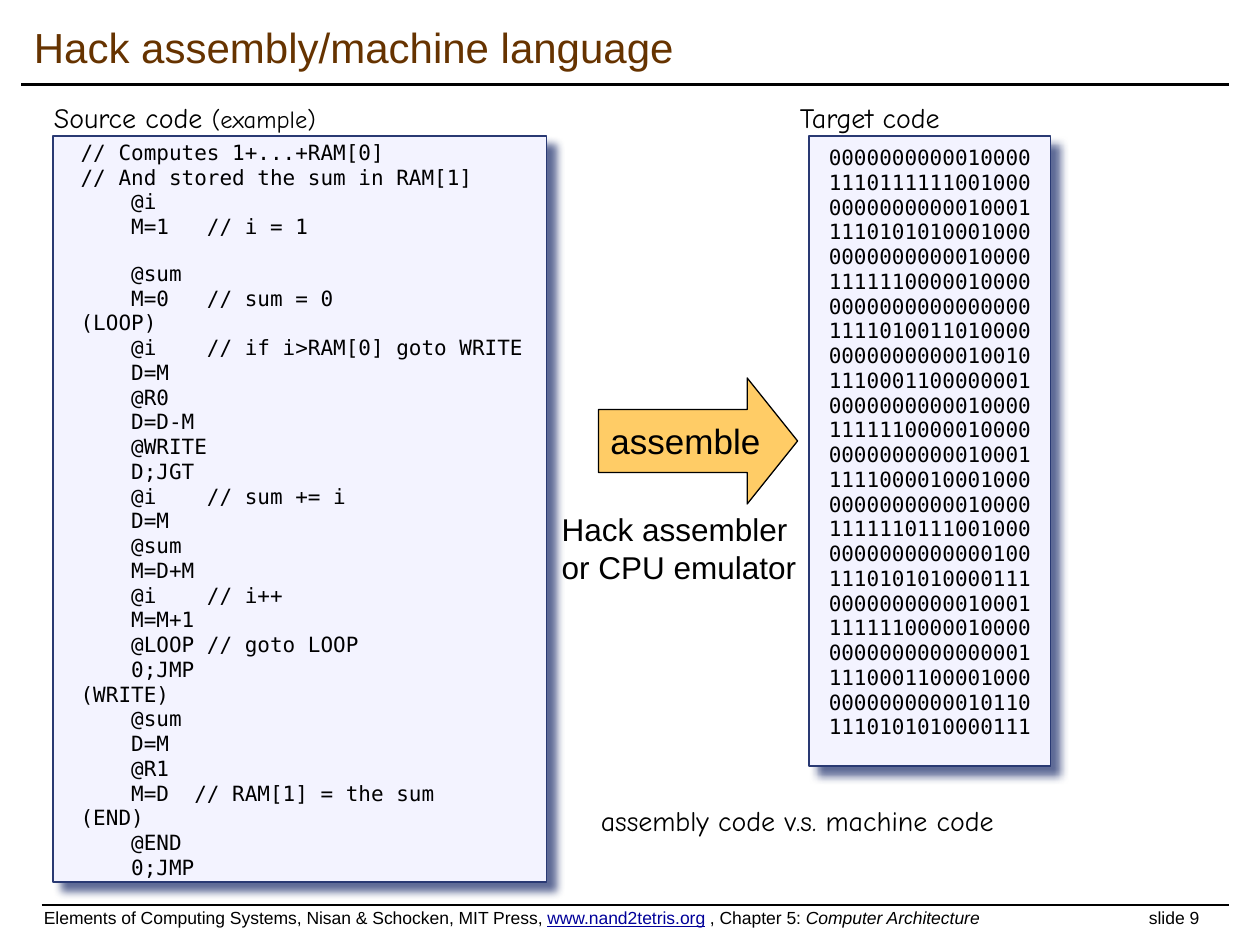
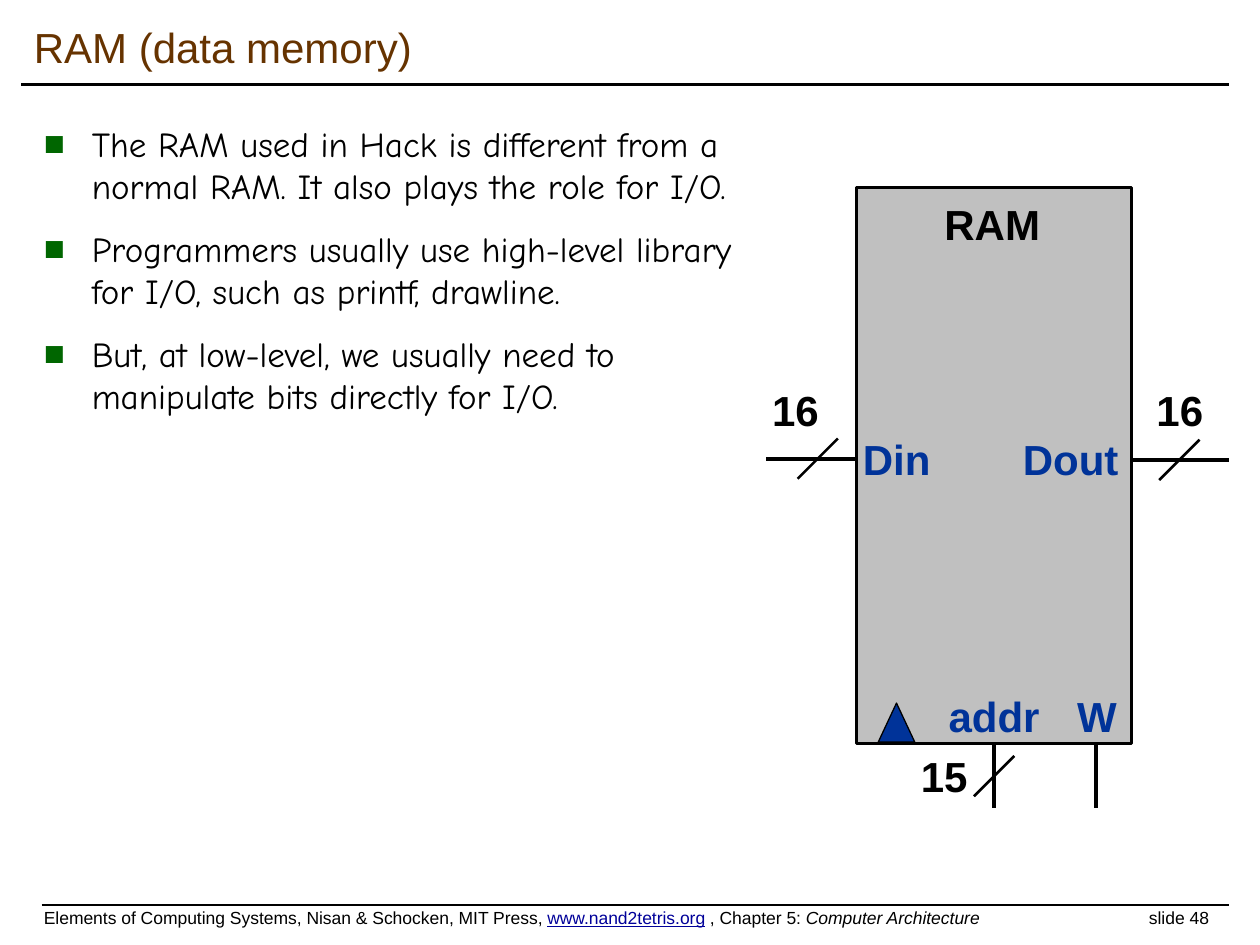
from dataclasses import dataclass

from lxml.etree import SubElement as sub
from pptx import Presentation as Deck
from pptx.dml.color import RGBColor as Color
from pptx.enum.shapes import MSO_CONNECTOR as Link, MSO_SHAPE as Form
from pptx.enum.text import MSO_ANCHOR as Anchor, PP_ALIGN as Align
from pptx.oxml.ns import qn
from pptx.util import Inches, Pt


@dataclass(frozen=True)
class Theme:
    # Fonts
    sans: str = "Arial"
    hand: str = "Comic Neue"
    mono: str = "DejaVu Sans Mono"
    # Colours
    ink: str = "000000"
    brown: str = "663300"
    link: str = "000099"
    green: str = "006600"
    navy: str = "003399"
    gray: str = "C0C0C0"
    gold: str = "FFCC66"
    pale: str = "F3F3FF"
    edge: str = "293973"
    # Type sizes
    head: int = 24
    body: int = 20
    sub: int = 18
    note: int = 16
    aside: int = 14
    code: int = 12
    foot: int = 10


LOOK = Theme()

SOURCE = """\
// Computes 1+...+RAM[0]
// And stored the sum in RAM[1]
    @i
    M=1   // i = 1

    @sum
    M=0   // sum = 0
(LOOP)
    @i    // if i>RAM[0] goto WRITE
    D=M
    @R0
    D=D-M
    @WRITE
    D;JGT
    @i    // sum += i
    D=M
    @sum
    M=D+M
    @i    // i++
    M=M+1
    @LOOP // goto LOOP
    0;JMP
(WRITE)
    @sum
    D=M
    @R1
    M=D  // RAM[1] = the sum
(END)
    @END
    0;JMP"""

TARGET = """\
0000000000010000
1110111111001000
0000000000010001
1110101010001000
0000000000010000
1111110000010000
0000000000000000
1111010011010000
0000000000010010
1110001100000001
0000000000010000
1111110000010000
0000000000010001
1111000010001000
0000000000010000
1111110111001000
0000000000000100
1110101010000111
0000000000010001
1111110000010000
0000000000000001
1110001100001000
0000000000010110
1110101010000111"""

POINTS = (
    "The RAM used in Hack is different from a normal RAM. "
    "It also plays the role for I/O.",
    "Programmers usually use high-level library for I/O, "
    "such as printf, drawline.",
    "But, at low-level, we usually need to manipulate bits directly for I/O.",
)


def assign(item, **values):
    for name, value in values.items():
        setattr(item, name, value)


def inches(values):
    return [Inches(value) for value in values]


class Pen:
    """Holds the style and the slide being drawn."""

    def __init__(self, deck, look):
        self.deck, self.look, self.slide = deck, look, None

    def page(self, title, number):
        """Start a slide with its title, rules and footer."""
        look = self.look
        self.slide = self.deck.slides.add_slide(self.deck.slide_layouts[6])
        self.line(0.17, 0.67, 9.75, 0.67, 2)
        self.line(0.33, 7.18, 9.75, 7.18, 1)
        self.text((0.17, 0.08, 9.58, 0.58), title, size=look.head,
                  color=look.brown, anchor=Anchor.MIDDLE)
        frame = self.text((0.25, 7.15, 9.5, 0.27), "", anchor=Anchor.MIDDLE)
        para = frame.paragraphs[0]
        tabs = sub(para._p.get_or_add_pPr(), qn("a:tabLst"))
        sub(tabs, qn("a:tab"), pos=str(Inches(8.77)), algn="l")
        size = look.foot
        self.run(para, "Elements of Computing Systems, Nisan & Schocken, "
                       "MIT Press, ", size)
        self.run(para, "www.nand2tetris.org", size, look.link, underline=True)
        self.run(para, " , Chapter 5: ", size)
        self.run(para, "Computer Architecture", size, italic=True)
        self.run(para, f"\tslide {number}", size)

    def run(self, para, words, size, color=None, face=None, **style):
        run = para.add_run()
        run.text = words
        assign(run.font, size=Pt(size), name=face or self.look.sans, **style)
        run.font.color.rgb = Color.from_string(color or self.look.ink)

    def fill(self, frame, words, size, color=None, face=None, align=Align.LEFT,
             anchor=Anchor.TOP, wrap=True, pad=(0.1, 0.05, 0.1, 0.05), **style):
        """Write each line of the words as a paragraph."""
        left, top, right, base = inches(pad)
        assign(frame, word_wrap=wrap, vertical_anchor=anchor, margin_left=left,
               margin_top=top, margin_right=right, margin_bottom=base)
        for index, line in enumerate(words.split("\n")):
            para = frame.add_paragraph() if index else frame.paragraphs[0]
            para.alignment = align
            if line:
                self.run(para, line, size, color, face, **style)
        return frame

    def text(self, area, words, size=LOOK.head, **style):
        box = self.slide.shapes.add_textbox(*inches(area))
        return self.fill(box.text_frame, words, size, **style)

    def label(self, area, words):
        return self.text(area, words, self.look.note, face=self.look.hand)

    def pin(self, area, words, color=None):
        self.text(area, words, color=color, bold=True, wrap=False)

    def shape(self, form, area, color, width, edge=None):
        item = self.slide.shapes.add_shape(form, *inches(area))
        item.shadow.inherit = False
        item.fill.solid()
        item.fill.fore_color.rgb = Color.from_string(color)
        item.line.color.rgb = Color.from_string(edge or self.look.ink)
        item.line.width = Pt(width)
        return item

    def code(self, area, words, pad, align=Align.LEFT):
        """Draw a shadowed panel of code; an empty line becomes a gap."""
        look = self.look
        panel = self.shape(Form.RECTANGLE, area, look.pale, 0.75, look.edge)
        effect = panel.element.spPr.find(qn("a:effectLst"))
        shade = sub(effect, qn("a:outerShdw"), blurRad=str(Pt(5)),
                    dist=str(Pt(7.1)), dir="2700000", algn="tl",
                    rotWithShape="0")
        tone = sub(shade, qn("a:srgbClr"), val=look.edge)
        sub(tone, qn("a:alpha"), val="75000")
        parts = words.split("\n\n")
        frame = self.fill(panel.text_frame, "\n".join(parts), look.code,
                          face=look.mono, align=align, pad=pad)
        for index, para in enumerate(frame.paragraphs):
            assign(para, line_spacing=0.9, space_before=Pt(1.2 if index else 0))
        if len(parts) > 1:
            gap = len(parts[0].split("\n"))
            frame.paragraphs[gap].space_before = Pt(13.7)

    def list(self, area, points):
        look = self.look
        frame = self.text(area, "\n".join(points), look.body, face=look.hand)
        for index, para in enumerate(frame.paragraphs):
            props = para._p.get_or_add_pPr()
            props.set("marL", str(Inches(0.38)))
            props.set("indent", str(Inches(-0.38)))
            sub(sub(props, qn("a:buClr")), qn("a:srgbClr"), val=look.green)
            sub(props, qn("a:buFont"), typeface=look.sans)
            sub(props, qn("a:buChar"), char="■")
            para.space_before = Pt(12 if index else 0)

    def line(self, x1, y1, x2, y2, width):
        ends = inches((x1, y1, x2, y2))
        item = self.slide.shapes.add_connector(Link.STRAIGHT, *ends)
        item.line.color.rgb = Color.from_string(self.look.ink)
        item.line.width = Pt(width)
        sub(item.element.spPr, qn("a:effectLst"))
        return item

    def slash(self, x, y):
        """Mark a bus with a short stroke centred on its wire."""
        self.line(x + 0.16, y - 0.16, x - 0.16, y + 0.16, 1.5)


def draw_code(pen):
    look = pen.look
    pen.page("Hack assembly/machine language", 9)

    # Source and target panels
    pen.code((0.42, 1.08, 3.92, 5.92), SOURCE, (0.22, 0.05, 0, 0.05))
    pen.code((6.42, 1.08, 1.92, 5), TARGET, (0.06, 0.09, 0.06, 0.09),
             Align.CENTER)
    source = pen.label((0.33, 0.75, 3.32, 0.42), "Source code ")
    pen.run(source.paragraphs[0], "(example)", look.aside, face=look.hand)
    pen.label((6.25, 0.75, 1.49, 0.42), "Target code")
    pen.label((4.67, 6.33, 5.17, 0.67), "assembly code v.s. machine code")

    # Assemble step
    arrow = pen.shape(Form.RIGHT_ARROW, (4.75, 3, 1.58, 1), look.gold, 0.75)
    arrow.adjustments[0], arrow.adjustments[1] = 0.5, 0.4
    pen.fill(arrow.text_frame, "assemble", look.body, align=Align.CENTER,
             anchor=Anchor.MIDDLE, wrap=False)
    pen.text((4.36, 4, 2.14, 0.71), "Hack assembler\nor CPU emulator", look.sub)


def draw_ram(pen):
    look = pen.look
    pen.page("RAM (data memory)", 48)
    pen.list((0.25, 0.92, 5.69, 6.08), POINTS)

    # Memory chip and clock
    chip = pen.shape(Form.RECTANGLE, (6.8, 1.49, 2.18, 4.41), look.gray, 1.5)
    pen.shape(Form.ISOSCELES_TRIANGLE, (6.97, 5.58, 0.29, 0.31), look.navy, 0.75)
    pen.text((7.06, 1.53, 1.63, 0.91), "RAM", bold=True, align=Align.CENTER)

    # Pin names
    for name, left, top, width in (("Din", 6.75, 3.39, 0.74),
                                   ("Dout", 8.02, 3.39, 0.97),
                                   ("addr", 7.43, 5.43, 0.93),
                                   ("W", 8.45, 5.43, 0.52)):
        pen.pin((left, top, width, 0.51), name, look.navy)

    # Wires
    pen.line(6.08, 3.64, 6.8, 3.64, 2.25)
    pen.line(8.98, 3.65, 9.75, 3.65, 2.25)
    pen.line(7.89, 5.9, 7.89, 6.41, 2.25).begin_connect(chip, 2)
    pen.line(8.7, 5.9, 8.7, 6.41, 2.25)

    # Bus widths
    for bits, left, top, x, y in (("16", 6.03, 3, 6.49, 3.64),
                                  ("16", 9.08, 3, 9.36, 3.65),
                                  ("15", 7.21, 5.91, 7.89, 6.16)):
        pen.pin((left, top, 0.58, 0.51), bits)
        pen.slash(x, y)


def main():
    deck = Deck()
    assign(deck, slide_width=Inches(10), slide_height=Inches(7.5))
    pen = Pen(deck, LOOK)
    draw_code(pen)
    draw_ram(pen)
    deck.save("out.pptx")


if __name__ == "__main__":
    main()
